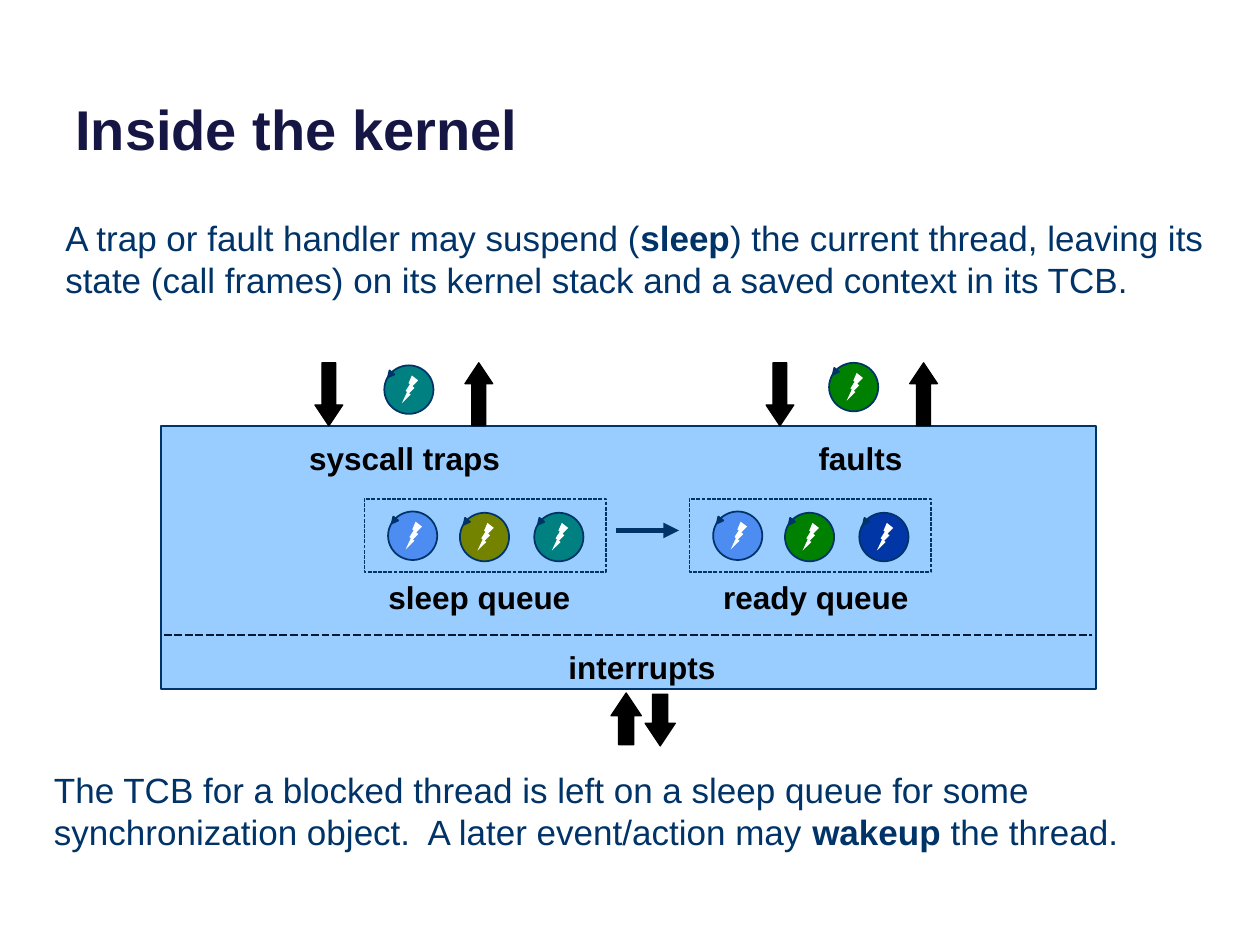
from lxml import etree
from pptx import Presentation
from pptx import util as u
from pptx.dml.color import RGBColor
from pptx.enum import dml, shapes, text
from pptx.oxml.ns import qn

NAVY = RGBColor(0x00, 0x33, 0x67)
TITLE_NAVY = RGBColor(0x16, 0x16, 0x45)
DIVIDER = RGBColor(0x00, 0x19, 0x34)
SKY = RGBColor(0x99, 0xCC, 0xFF)
BLACK = RGBColor(0, 0, 0)
WHITE = RGBColor(0xFF, 0xFF, 0xFF)
BLUE = RGBColor(0x4D, 0x8C, 0xF1)
OLIVE = RGBColor(0x73, 0x83, 0x00)
TEAL = RGBColor(0x00, 0x80, 0x80)
GREEN = RGBColor(0x00, 0x80, 0x00)
ROYAL = RGBColor(0x00, 0x36, 0xA6)

FONT = "Arial"
KINDS = shapes.MSO_SHAPE
DASH = dml.MSO_LINE.SQUARE_DOT

# Content: (text, bold) runs, then label, box
TITLE = [("Inside the kernel", True)]
PARAGRAPHS = [
    ((0.42, 1.67, 9.5, 0.78), [
        ("A trap or fault handler may suspend (", False), ("sleep", True),
        (") the current thread, leaving its state (call frames) on its kernel "
         "stack and a saved context in its TCB.", False)]),
    ((0.33, 6.05, 9.5, 0.78), [
        ("The TCB for a blocked thread is left on a sleep queue for some "
         "synchronization object.  A later event/action may ", False),
        ("wakeup", True), (" the thread.", False)]),
]
LABELS = [
    ("syscall traps", (1.92, 3.43, 2.58, 0.41)),
    ("faults", (5.83, 3.43, 2, 0.41)),
    ("interrupts", (4, 5.09, 2.19, 0.41)),
    ("sleep queue", (2.72, 4.54, 2.17, 0.4)),
    ("ready queue", (5.39, 4.54, 2.17, 0.4)),
]
KERNEL = (1.28, 3.38, 7.42, 2.09)
QUEUES = [(2.89, [BLUE, OLIVE, TEAL]), (5.47, [BLUE, GREEN, ROYAL])]
QUEUE_TOP, QUEUE_WIDTH, QUEUE_HEIGHT = 3.96, 1.92, 0.58
SLOTS = [(0.19, 0.1), (0.76, 0.11), (1.35, 0.11)]
ENTERING_THREADS = [(3.05, 2.9, TEAL), (6.58, 2.88, GREEN)]
GATE_ARROWS = [  # down into the kernel, up out of it
    (KINDS.DOWN_ARROW, (2.5, 2.88, 0.22, 0.5)),
    (KINDS.UP_ARROW, (3.69, 2.88, 0.22, 0.5)),
    (KINDS.DOWN_ARROW, (6.08, 2.88, 0.22, 0.5)),
    (KINDS.UP_ARROW, (7.22, 2.88, 0.22, 0.5)),
    (KINDS.UP_ARROW, (4.85, 5.5, 0.24, 0.41)),
    (KINDS.DOWN_ARROW, (5.12, 5.51, 0.24, 0.41)),
]


def add_shape(slide, kind, box, fill=None, line=None, width=1):
    shape = slide.shapes.add_shape(kind, *map(u.Inches, box))
    shape.shadow.inherit = False
    if fill is None:
        shape.fill.background()
    else:
        shape.fill.solid()
        shape.fill.fore_color.rgb = fill
    if line is None:
        shape.line.fill.background()
    else:
        shape.line.color.rgb = line
        shape.line.width = u.Pt(width)
    return shape


def add_text(slide, box, runs, size, color, align=text.PP_ALIGN.LEFT,
             anchor=text.MSO_ANCHOR.TOP):
    frame = slide.shapes.add_textbox(*map(u.Inches, box)).text_frame
    frame.word_wrap = True
    frame.vertical_anchor = anchor
    paragraph = frame.paragraphs[0]
    paragraph.alignment = align
    for words, bold in runs:
        run = paragraph.add_run()
        run.text = words
        run.font.name = FONT
        run.font.size = u.Pt(size)
        run.font.bold = bold
        run.font.color.rgb = color


def add_line(slide, start, end, color, width):
    line = slide.shapes.add_connector(
        shapes.MSO_CONNECTOR.STRAIGHT, *map(u.Inches, start + end))
    line.line.color.rgb = color
    line.line.width = u.Pt(width)
    etree.SubElement(line._element.spPr, qn("a:effectLst"))
    return line


def add_thread(slide, left, top, color):
    """Draw a thread: a disc with a lightning bolt and a small arrow tip on its rim."""
    add_shape(slide, KINDS.OVAL, (left, top, 0.39, 0.385), color, NAVY)
    bolt = add_shape(slide, KINDS.LIGHTNING_BOLT,
                     (left + 0.14, top + 0.08, 0.13, 0.22), WHITE)
    bolt._element.spPr.xfrm.set("flipH", "1")
    tip = add_shape(slide, KINDS.ISOSCELES_TRIANGLE,
                    (left + 0.02, top + 0.05, 0.05, 0.05), NAVY, NAVY)
    tip.rotation = 219


def add_queue(slide, left, colors):
    for (dx, dy), color in zip(SLOTS, colors):
        add_thread(slide, left + dx, QUEUE_TOP + dy, color)
    frame = add_shape(slide, KINDS.RECTANGLE,
                      (left, QUEUE_TOP, QUEUE_WIDTH, QUEUE_HEIGHT), None, NAVY, 0.75)
    frame.line.dash_style = DASH


def main():
    presentation = Presentation()
    presentation.slide_width, presentation.slide_height = u.Inches(10), u.Inches(7.5)
    slide = presentation.slides.add_slide(presentation.slide_layouts[6])

    add_text(slide, (0.5, -0.37, 9, 1.7), TITLE, 32, TITLE_NAVY,
             anchor=text.MSO_ANCHOR.BOTTOM)

    add_shape(slide, KINDS.FLOWCHART_PROCESS, KERNEL, SKY, NAVY)
    divider = add_line(slide, (1.3, 5.04), (8.67, 5.04), DIVIDER, 1.5)
    divider.line.dash_style = DASH

    for kind, box in GATE_ARROWS:
        arrow = add_shape(slide, kind, box, BLACK, BLACK, 0.75)
        arrow.adjustments[0], arrow.adjustments[1] = 0.5, 0.75

    for left, colors in QUEUES:
        add_queue(slide, left, colors)
    for left, top, color in ENTERING_THREADS:
        add_thread(slide, left, top, color)

    wakeup = add_line(slide, (4.89, 4.21), (5.39, 4.21), NAVY, 3)
    etree.SubElement(wakeup.line._get_or_add_ln(), qn("a:tailEnd"), type="triangle")

    for label, box in LABELS:
        add_text(slide, box, [(label, True)], 18, BLACK, text.PP_ALIGN.CENTER,
                 text.MSO_ANCHOR.MIDDLE)
    for box, runs in PARAGRAPHS:
        add_text(slide, box, runs, 20, NAVY)

    presentation.save("out.pptx")


if __name__ == "__main__":
    main()
